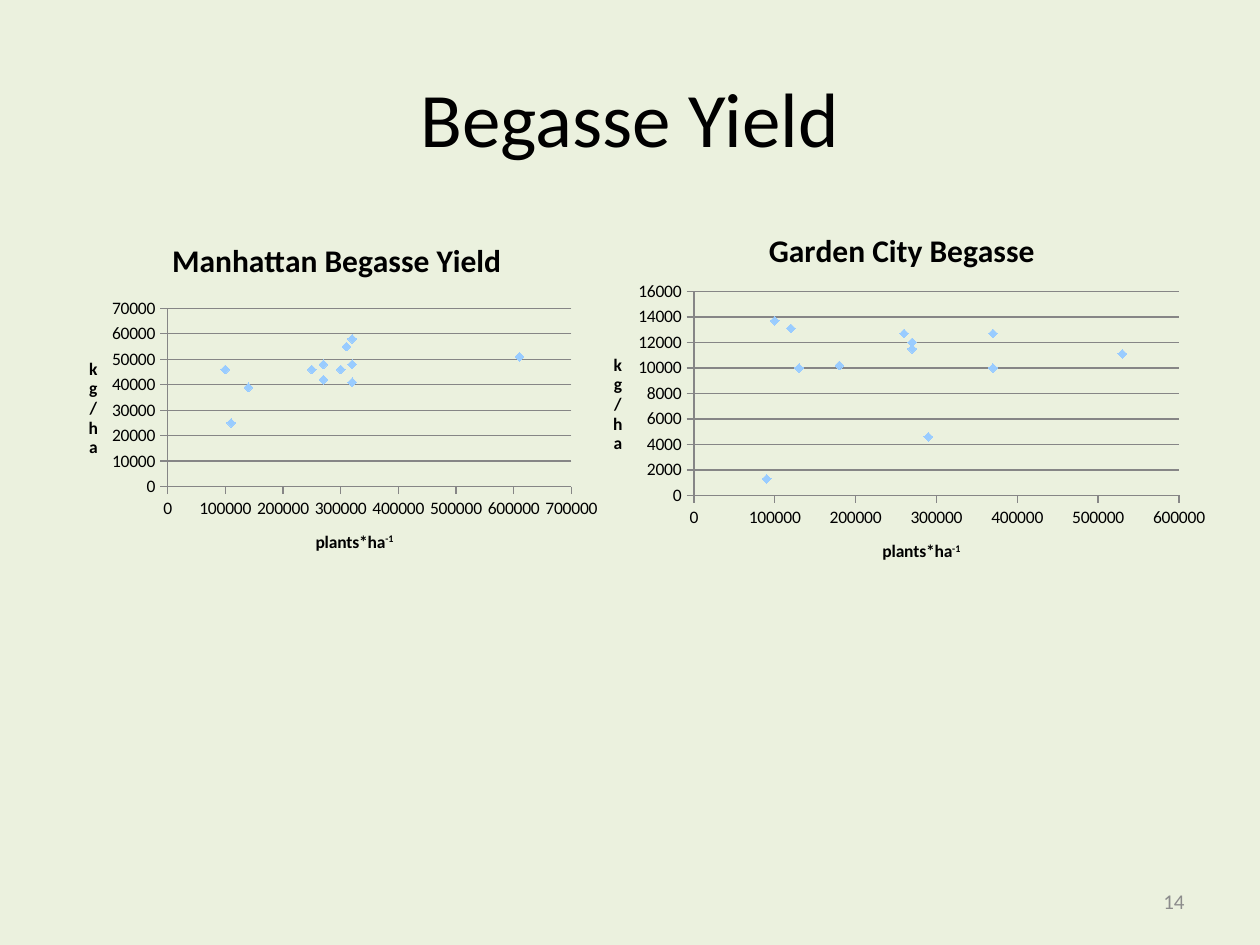
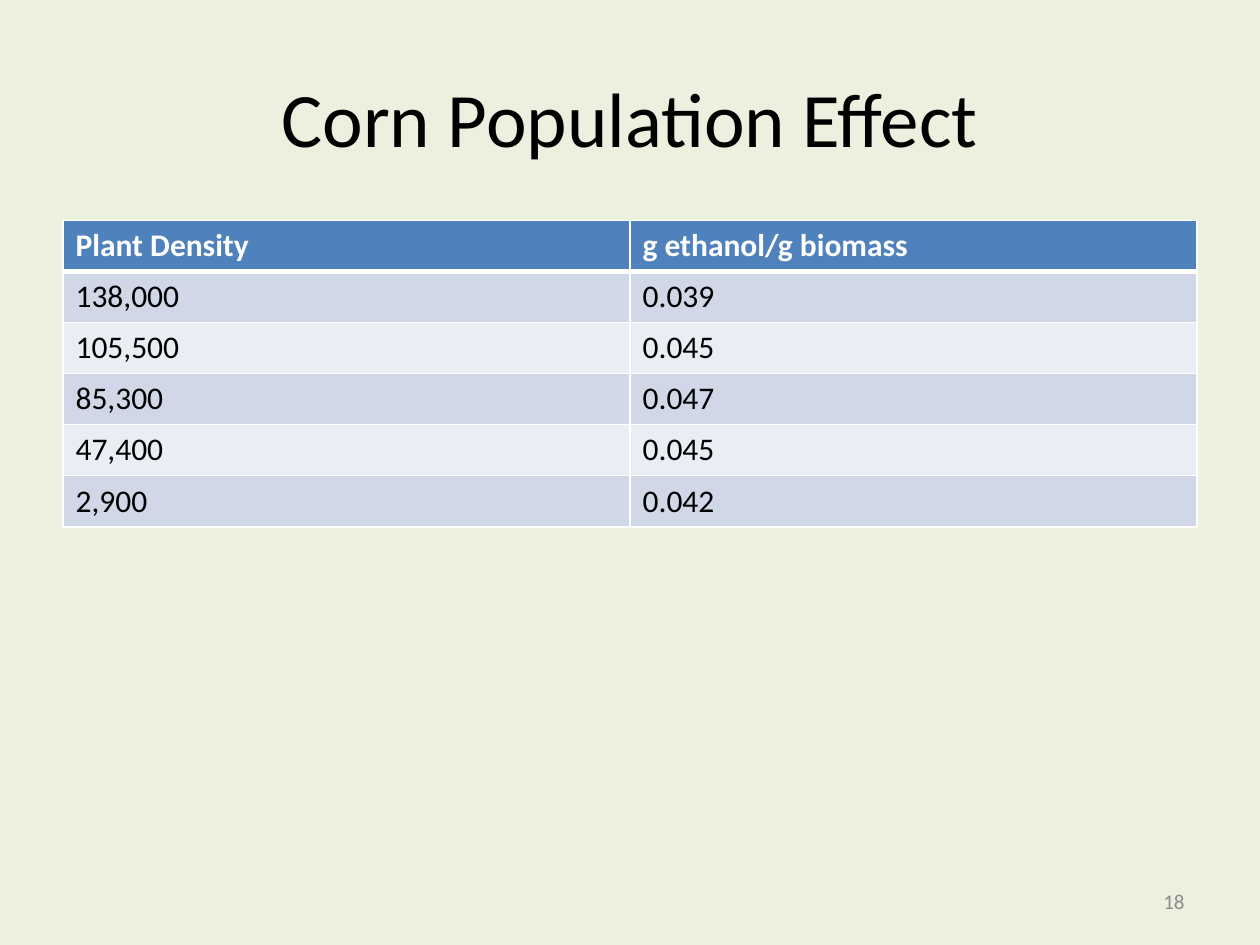
"""Build two slides on plant density: begasse yield charts and a corn ethanol table."""
from lxml.etree import SubElement
from pptx import Presentation
from pptx.chart.data import XyChartData
from pptx.dml.color import RGBColor
from pptx.enum.chart import XL_CHART_TYPE, XL_MARKER_STYLE, XL_TICK_MARK
from pptx.enum.text import MSO_ANCHOR, PP_ALIGN
from pptx.oxml import parse_xml
from pptx.oxml.ns import nsdecls, qn
from pptx.util import Cm, Pt

FONT = "Calibri"
COLORS = {
    "background": "EBF1DE",
    "text": "000000",
    "number": "8C8C8C",
    "header": "4F81BD",
    "odd_row": "D0D8E8",
    "even_row": "E9EDF4",
    "white": "FFFFFF",
    "marker": "99CCFF",
    "grid": "868686",
}
MARGIN, CONTENT_WIDTH = 1.27, 22.86

MANHATTAN = [
    (610000, 51000), (100000, 46000), (310000, 55000), (300000, 46000),
    (270000, 42000), (320000, 48000), (320000, 58000), (250000, 46000),
    (110000, 25000), (270000, 48000), (140000, 39000), (320000, 41000),
]
GARDEN_CITY = [
    (180000, 10200), (270000, 12000), (90000, 1300), (530000, 11100),
    (270000, 11500), (100000, 13700), (120000, 13100), (260000, 12700),
    (370000, 12700), (370000, 10000), (130000, 10000), (290000, 4600),
]
ETHANOL_ROWS = [
    ("Plant Density", "g ethanol/g biomass"),
    ("138,000", "0.039"),
    ("105,500", "0.045"),
    ("85,300", "0.047"),
    ("47,400", "0.045"),
    ("2,900", "0.042"),
]


def color(name):
    return RGBColor.from_string(COLORS[name])


def write_text(frame, text, *, size, fill="text", bold=False, align=None,
               anchor=None, superscript=""):
    paragraph = frame.paragraphs[0]
    if align is not None:
        paragraph.alignment = align
    if anchor is not None:
        frame.vertical_anchor = anchor
    for part in filter(None, (text, superscript)):
        run = paragraph.add_run()
        run.text = part
        run.font.name, run.font.size, run.font.bold = FONT, Pt(size), bold
        run.font.color.rgb = color(fill)
    if superscript:
        run.font._element.set("baseline", "30000")


def add_titled_slide(presentation, title, number):
    slide = presentation.slides.add_slide(presentation.slide_layouts[5])
    placeholder = slide.shapes.title
    placeholder.left, placeholder.top = Cm(MARGIN), Cm(0.76)
    placeholder.width, placeholder.height = Cm(CONTENT_WIDTH), Cm(3.18)
    write_text(placeholder.text_frame, title, size=44,
               align=PP_ALIGN.CENTER, anchor=MSO_ANCHOR.MIDDLE)
    box = slide.shapes.add_textbox(Cm(18.2), Cm(17.65), Cm(5.93), Cm(1.02))
    box.text_frame.word_wrap = True
    write_text(box.text_frame, str(number), size=12, fill="number",
               align=PP_ALIGN.RIGHT, anchor=MSO_ANCHOR.MIDDLE)
    return slide


def place_plot(chart, x, y, width, height):
    plot_area = chart._chartSpace.chart.plotArea
    for layout in plot_area.findall(qn("c:layout")):
        plot_area.remove(layout)
    values = {"layoutTarget": "inner", "xMode": "edge", "yMode": "edge",
              "x": x, "y": y, "w": width, "h": height}
    settings = "".join(f'<c:{tag} val="{value}"/>' for tag, value in values.items())
    plot_area.insert(0, parse_xml(
        f'<c:layout {nsdecls("c")}><c:manualLayout>{settings}</c:manualLayout></c:layout>'))


def format_axis(axis, title, maximum, step, superscript=""):
    axis.minimum_scale, axis.maximum_scale, axis.major_unit = 0, maximum, step
    axis.major_tick_mark, axis.minor_tick_mark = XL_TICK_MARK.OUTSIDE, XL_TICK_MARK.NONE
    axis.tick_labels.number_format = "General"
    axis.tick_labels.number_format_is_linked = False
    axis.format.line.color.rgb = color("grid")
    write_text(axis.axis_title.text_frame, title, size=10, bold=True,
               superscript=superscript)


def add_scatter(slide, title, points, bounds, plot_bounds, x_scale, y_scale):
    data = XyChartData()
    series_data = data.add_series("Series 1")
    for x, y in points:
        series_data.add_data_point(x, y)
    chart = slide.shapes.add_chart(
        XL_CHART_TYPE.XY_SCATTER, *map(Cm, bounds), data).chart
    chart.has_legend = False
    chart.font.name, chart.font.size = FONT, Pt(10)
    chart.font.color.rgb = color("text")
    chart.has_title = True
    write_text(chart.chart_title.text_frame, title, size=18, bold=True)
    place_plot(chart, *plot_bounds)

    format_axis(chart.category_axis, "plants*ha", *x_scale, superscript="-1")
    chart.category_axis.has_major_gridlines = False
    value_axis = chart.value_axis
    format_axis(value_axis, "kg/ha", *y_scale)
    value_axis.has_major_gridlines = True
    value_axis.major_gridlines.format.line.color.rgb = color("grid")
    body = value_axis.axis_title.text_frame._txBody.bodyPr
    body.set("rot", "0")
    body.set("vert", "wordArtVert")

    chart.plots[0].vary_by_categories = False
    series = chart.plots[0].series[0]
    series.smooth = False
    series.format.line.fill.background()
    series.marker.style, series.marker.size = XL_MARKER_STYLE.DIAMOND, 5
    series.marker.format.fill.solid()
    series.marker.format.fill.fore_color.rgb = color("marker")
    series.marker.format.line.color.rgb = color("marker")


def add_border(cell, side, points):
    line = SubElement(cell._tc.get_or_add_tcPr(), qn(f"a:ln{side}"), w=str(Pt(points)))
    fill = SubElement(line, qn("a:solidFill"))
    SubElement(fill, qn("a:srgbClr"), val=COLORS["white"])


def add_table(slide, rows, left, top, width, row_height):
    table = slide.shapes.add_table(
        len(rows), len(rows[0]), Cm(left), Cm(top),
        Cm(width), Cm(row_height * len(rows))).table
    for row_index, values in enumerate(rows):
        is_header = row_index == 0
        fill = "header" if is_header else "odd_row" if row_index % 2 else "even_row"
        borders = {"L": 1, "R": 1, "T": 3 if row_index == 1 else 1,
                   "B": 3 if is_header else 1}
        for column_index, value in enumerate(values):
            cell = table.cell(row_index, column_index)
            for side, points in borders.items():
                add_border(cell, side, points)
            cell.fill.solid()
            cell.fill.fore_color.rgb = color(fill)
            write_text(cell.text_frame, value, size=18, bold=is_header,
                       fill="white" if is_header else "text")


def main():
    presentation = Presentation()
    presentation.slide_width, presentation.slide_height = Cm(25.4), Cm(19.05)
    background = presentation.slide_master.background.fill
    background.solid()
    background.fore_color.rgb = color("background")

    yield_slide = add_titled_slide(presentation, "Begasse Yield", 14)
    add_scatter(yield_slide, "Manhattan Begasse Yield", MANHATTAN,
                (1.29, 4.42, 11, 7.19), (0.19, 0.25, 0.74, 0.5),
                (700000, 100000), (70000, 10000))
    add_scatter(yield_slide, "Garden City Begasse", GARDEN_CITY,
                (11.83, 4.2, 12.7, 7.62), (0.17, 0.22, 0.77, 0.54),
                (600000, 100000), (16000, 2000))

    corn_slide = add_titled_slide(presentation, "Corn Population Effect", 18)
    add_table(corn_slide, ETHANOL_ROWS, MARGIN, 4.44, CONTENT_WIDTH, 1.03)

    presentation.save("out.pptx")


if __name__ == "__main__":
    main()
